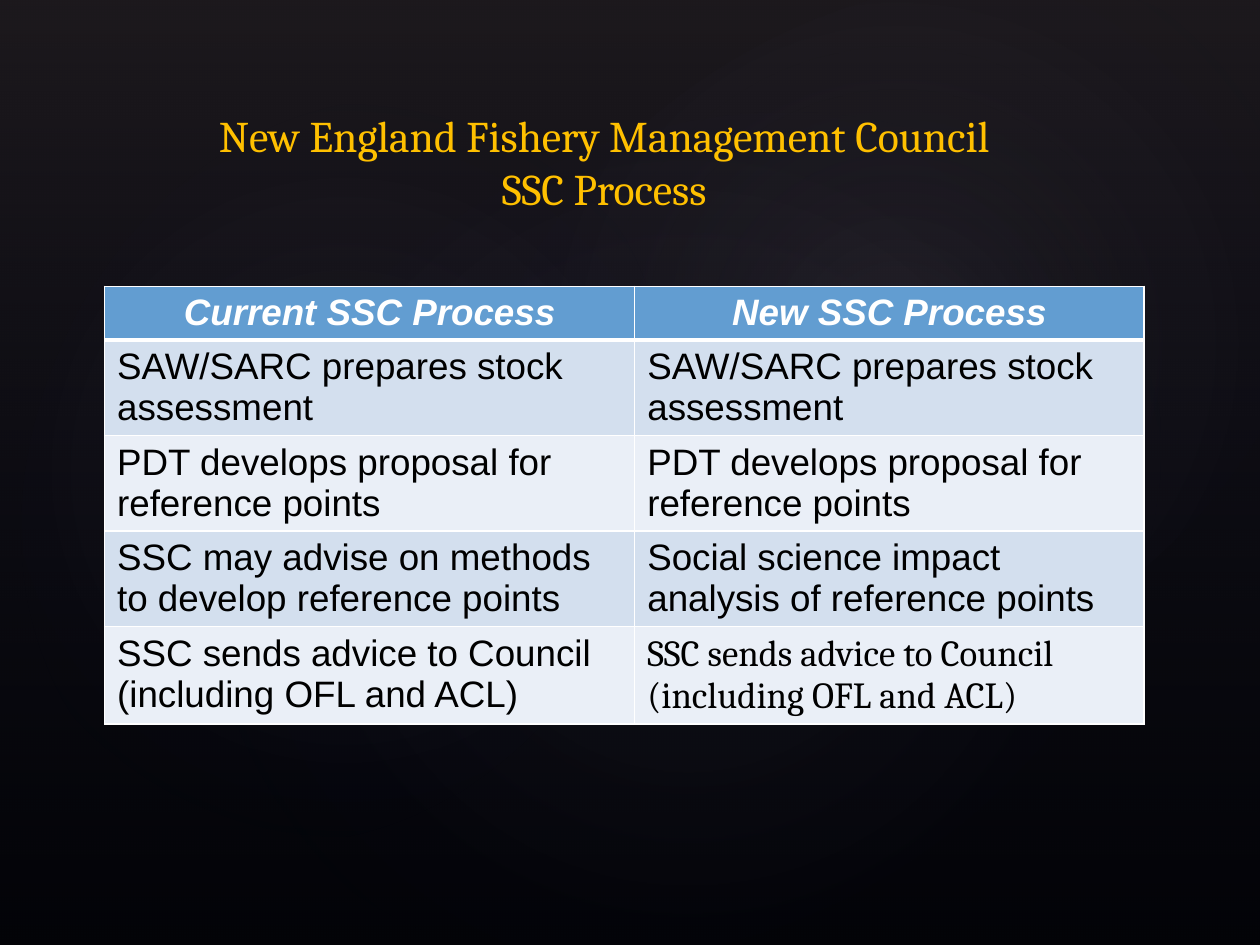
from lxml import etree
from pptx import Presentation
from pptx import util as u
from pptx.dml.color import RGBColor
from pptx.enum import shapes, text
from pptx.oxml import parse_xml
from pptx.oxml.ns import nsdecls, qn

WHITE = RGBColor(0xFF, 0xFF, 0xFF)
BLACK = RGBColor(0, 0, 0)
GOLD = RGBColor(0xFF, 0xC0, 0)
BLUE = RGBColor(0x62, 0x9D, 0xD1)
PALE = RGBColor(0xD3, 0xDF, 0xEE)
MIST = RGBColor(0xEA, 0xEF, 0xF7)
NAVY = RGBColor(0x24, 0x28, 0x52)
PLUM = RGBColor(0x50, 0x46, 0x52)
LILAC = RGBColor(0xC4, 0xBC, 0xC6)

# share of slide: left, top, width, height; then turn and opacity
GLOWS = [
    (0.15, 0.152, 0.792, 0.832, 328.7, 7),
    (-0.03, 0.171, 0.606, 0.653, 294.3, 8),
    (0.358, 0.017, 0.709, 0.693, 328.7, 8),
]
ROWS = [
    ("Current SSC Process", "New SSC Process"),
    ("SAW/SARC prepares stock assessment",) * 2,
    ("PDT develops proposal for reference points",) * 2,
    ("SSC may advise on methods to develop reference points",
     "Social science impact analysis of reference points"),
    ("SSC sends advice to Council (including OFL and ACL)",) * 2,
]


def write(frame, words, size=21, font="Arial", color=BLACK, bold=False,
          italic=False, align=text.PP_ALIGN.LEFT):
    frame.word_wrap = True
    para = frame.paragraphs[0]
    para.text = words
    para.alignment = align
    for run in para.runs:
        face = run.font
        face.size, face.name = u.Pt(size), font
        face.bold, face.italic = bold, italic
        face.color.rgb = color


def shade(shape, stops, way):
    """Fill with a gradient of (place, colour, opacity) stops, in percent."""
    marks = "".join(
        f'<a:gs pos="{place * 1000}"><a:srgbClr val="{color}">'
        f'<a:alpha val="{alpha * 1000}"/></a:srgbClr></a:gs>'
        for place, color, alpha in stops)
    grad = parse_xml(f'<a:gradFill {nsdecls("a")} rotWithShape="1">'
                     f'<a:gsLst>{marks}</a:gsLst>{way}</a:gradFill>')
    shape.shadow.inherit = False
    shape.line.fill.background()
    shape.fill.background()
    props = shape.element.spPr
    props.replace(props.find(qn("a:noFill")), grad)


def backdrop(slide, wide, high):
    back = slide.background.fill
    back.solid()
    back.fore_color.rgb = BLACK
    veil = slide.shapes.add_shape(shapes.MSO_SHAPE.RECTANGLE, 0, 0, wide, high)
    shade(veil, [(0, PLUM, 36), (100, NAVY, 10)],
          '<a:lin ang="5400000" scaled="0"/>')
    for left, top, width, height, turn, alpha in GLOWS:
        glow = slide.shapes.add_shape(
            shapes.MSO_SHAPE.OVAL, int(left * wide), int(top * high),
            int(width * wide), int(height * high))
        glow.rotation = turn
        shade(glow, [(0, LILAC, alpha), (58, NAVY, 0)],
              '<a:path path="circle"><a:fillToRect l="50000" t="50000" '
              'r="50000" b="50000"/></a:path>')


def heading(slide, left, top, width, height):
    title = slide.shapes.title
    title.left, title.top, title.width, title.height = left, top, width, height
    frame = title.text_frame
    frame.auto_size = text.MSO_AUTO_SIZE.NONE
    frame.vertical_anchor = text.MSO_ANCHOR.BOTTOM
    write(frame, "New England Fishery Management Council\vSSC Process",
          size=25, font="Cambria", color=GOLD, align=text.PP_ALIGN.CENTER)
    slide.shapes.element.append(title.element)  # above the backdrop


def edge(cell, **sides):
    """Draw white cell borders, widths in points by side (L, R, T, B)."""
    props = cell._tc.get_or_add_tcPr()
    for spot, (side, width) in enumerate(sides.items()):
        line = etree.Element(qn(f"a:ln{side}"), w=str(u.Pt(width)))
        fill = etree.SubElement(line, qn("a:solidFill"))
        etree.SubElement(fill, qn("a:srgbClr"), val=str(WHITE))
        props.insert(spot, line)


def compare(slide, left, top, width, height):
    """Table of the current and the new process, side by side."""
    grid = slide.shapes.add_table(len(ROWS), 2, left, top, width, height).table
    grid.columns[0].width = int(width * 0.51)
    grid.columns[1].width = width - grid.columns[0].width
    head = int(height * 0.12)
    for r, words in enumerate(ROWS):
        grid.rows[r].height = head if r == 0 else (height - head) // 4
        for c, word in enumerate(words):
            cell = grid.cell(r, c)
            cell.fill.solid()
            cell.fill.fore_color.rgb = BLUE if r == 0 else (MIST, PALE)[r % 2]
            edge(cell, L=1, R=1, T=3 if r == 1 else 1, B=3 if r == 0 else 1)
            if r == 0:
                write(cell.text_frame, word, color=WHITE, bold=True,
                      italic=True, align=text.PP_ALIGN.CENTER)
            else:
                last = (r, c) == (len(ROWS) - 1, 1)
                write(cell.text_frame, word,
                      font="Cambria" if last else "Arial")


def main():
    deck = Presentation()
    deck.slide_width, deck.slide_height = u.Inches(10), u.Inches(7.5)
    slide = deck.slides.add_slide(deck.slide_layouts[5])
    wide, high = deck.slide_width, deck.slide_height
    backdrop(slide, wide, high)
    compare(slide, int(wide * 0.083), int(high * 0.303),
            int(wide * 0.825), int(high * 0.46))
    heading(slide, int(wide * 0.067), int(high * 0.1),
            int(wide * 0.825), int(high * 0.133))
    deck.save("out.pptx")


if __name__ == "__main__":
    main()
